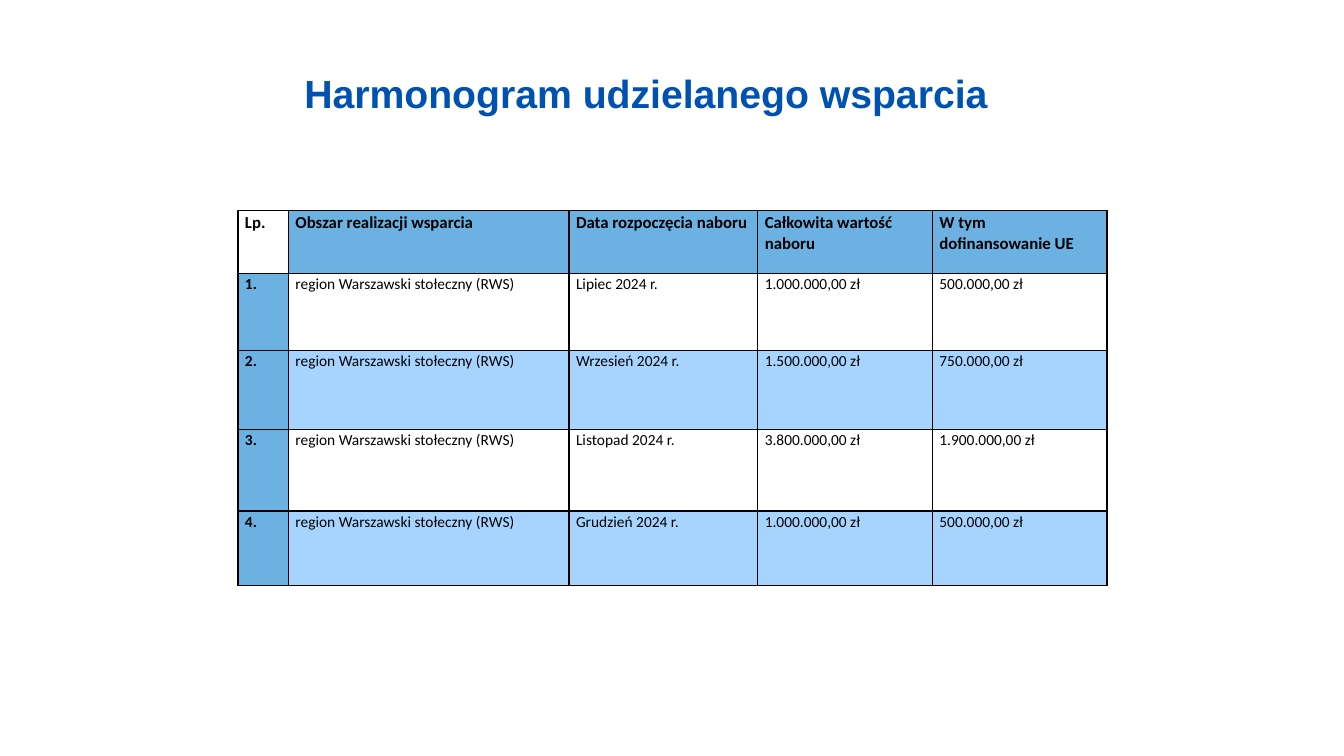
from dataclasses import dataclass

from lxml.etree import SubElement
from pptx import Presentation
from pptx.dml.color import RGBColor
from pptx.enum.text import MSO_ANCHOR, PP_ALIGN
from pptx.oxml.ns import qn
from pptx.util import Inches, Pt


@dataclass(frozen=True)
class Theme:
    title_font: str = "Arial"
    table_font: str = "Calibri"
    title_size: int = 28
    header_size: int = 12
    body_size: int = 11
    title_color: str = "0052B0"
    ink: str = "000000"
    header_fill: str = "6BB1E2"
    band_fill: str = "A6D4FF"
    border_width: int = 1
    line_spacing: float = 1.07


THEME = Theme()
SLIDE_WIDTH, SLIDE_HEIGHT = Inches(13.33), Inches(7.5)

# Left, top, width and height as shares of the slide
TITLE_AREA = (2.92 / 13.33, 0.64 / 7.5, 7.06 / 13.33, 0.57 / 7.5)
TABLE_AREA = (2.36 / 13.33, 2.09 / 7.5, 8.62 / 13.33, 3.72 / 7.5)

# Relative sizes of the table's columns and rows
COLUMN_WEIGHTS = (0.5, 2.78, 1.87, 1.73, 1.73)
ROW_WEIGHTS = (0.62, 0.77, 0.78, 0.81, 0.74)

REGION = "region Warszawski stołeczny (RWS)"
HEADERS = ("Lp.", "Obszar realizacji wsparcia", "Data rozpoczęcia naboru",
           "Całkowita wartość naboru", "W tym dofinansowanie UE")
CALLS = (
    ("Lipiec 2024 r.", "1.000.000,00 zł", "500.000,00 zł"),
    ("Wrzesień 2024 r.", "1.500.000,00 zł", "750.000,00 zł"),
    ("Listopad 2024 r.", "3.800.000,00 zł", "1.900.000,00 zł"),
    ("Grudzień 2024 r.", "1.000.000,00 zł", "500.000,00 zł"),
)


def place(area):
    """Turn shares of the slide into lengths."""
    sides = (SLIDE_WIDTH, SLIDE_HEIGHT) * 2
    return [round(share * side) for share, side in zip(area, sides)]


def write_text(frame, text, *, font, size, color, bold=False, spacing=None):
    para = frame.paragraphs[0]
    para.alignment = PP_ALIGN.LEFT
    para.line_spacing = spacing
    span = para.add_run()
    span.text = text
    span.font.name = font
    span.font.size = Pt(size)
    span.font.bold = bold
    span.font.color.rgb = RGBColor.from_string(color)


def add_title(page, text):
    box = page.shapes.add_textbox(*place(TITLE_AREA))
    box.text_frame.word_wrap = False
    write_text(box.text_frame, text, font=THEME.title_font,
               size=THEME.title_size, color=THEME.title_color, bold=True)


def add_borders(cell):
    properties = cell._tc.get_or_add_tcPr()
    for side in ("a:lnL", "a:lnR", "a:lnT", "a:lnB"):
        line = SubElement(properties, qn(side), w=str(Pt(THEME.border_width)))
        fill = SubElement(line, qn("a:solidFill"))
        SubElement(fill, qn("a:srgbClr"), val=THEME.ink)


def cell_fill(row, column):
    """Header row and number column share a fill; even rows are banded."""
    if row == column == 0:
        return None
    if row == 0 or column == 0:
        return THEME.header_fill
    return THEME.band_fill if row % 2 == 0 else None


def format_cell(cell, text, row, column):
    cell.margin_left = cell.margin_right = Inches(0.07)
    cell.margin_top = cell.margin_bottom = 0
    cell.vertical_anchor = MSO_ANCHOR.TOP
    add_borders(cell)
    color = cell_fill(row, column)
    if color:
        cell.fill.solid()
        cell.fill.fore_color.rgb = RGBColor.from_string(color)
    else:
        cell.fill.background()
    write_text(cell.text_frame, text, font=THEME.table_font, color=THEME.ink,
               size=THEME.body_size if row else THEME.header_size,
               bold=row == 0 or column == 0, spacing=THEME.line_spacing)


def add_schedule(page, rows):
    left, top, width, height = place(TABLE_AREA)
    table = page.shapes.add_table(len(rows), len(HEADERS),
                                  left, top, width, height).table
    table.first_row = table.horz_banding = False
    for column, weight in zip(table.columns, COLUMN_WEIGHTS):
        column.width = round(width * weight / sum(COLUMN_WEIGHTS))
    for row, weight in zip(table.rows, ROW_WEIGHTS):
        row.height = round(height * weight / sum(ROW_WEIGHTS))
    for row, texts in enumerate(rows):
        for column, text in enumerate(texts):
            format_cell(table.cell(row, column), text, row, column)


def main():
    deck = Presentation()
    deck.slide_width, deck.slide_height = SLIDE_WIDTH, SLIDE_HEIGHT
    page = deck.slides.add_slide(deck.slide_layouts[6])

    # Heading
    add_title(page, "Harmonogram udzielanego wsparcia")

    # Schedule of calls, numbered from one
    body = [(f"{number}.", REGION, *call)
            for number, call in enumerate(CALLS, start=1)]
    add_schedule(page, [HEADERS, *body])

    deck.save("out.pptx")


if __name__ == "__main__":
    main()
